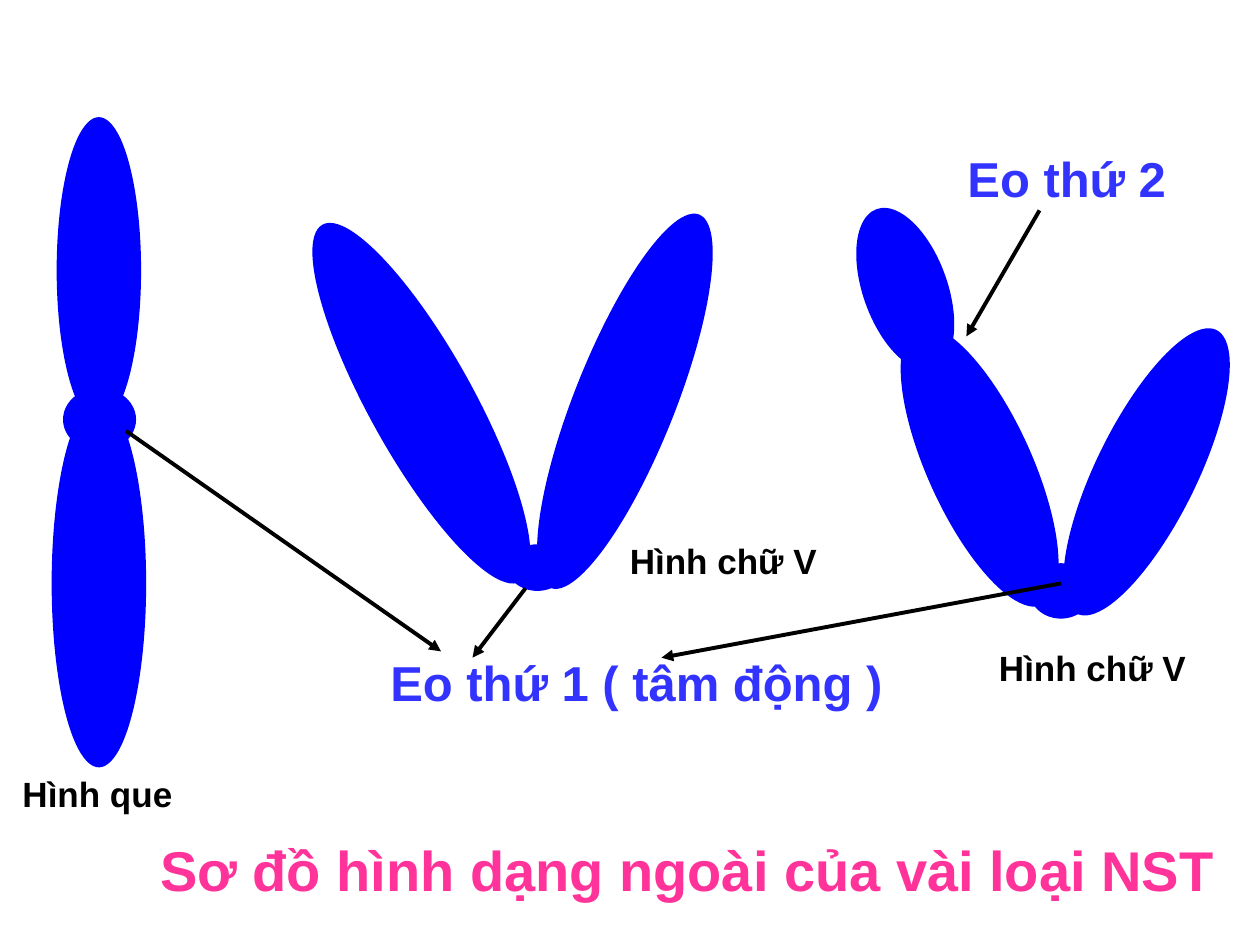
from lxml import etree
from pptx import Presentation
from pptx.dml.color import RGBColor
from pptx.enum.shapes import MSO_CONNECTOR, MSO_SHAPE
from pptx.enum.text import MSO_ANCHOR, MSO_AUTO_SIZE, PP_ALIGN
from pptx.oxml.ns import qn
from pptx.util import Inches, Pt

CHROMOSOME_BLUE = RGBColor(0x00, 0x00, 0xFF)
CONSTRICTION_BLUE = RGBColor(0x33, 0x33, 0xFF)
TITLE_PINK = RGBColor(0xFF, 0x33, 0x99)
BLACK = RGBColor(0x00, 0x00, 0x00)


def write(frame, text, size, color, wrap=True):
    frame.text = text
    frame.word_wrap = wrap
    frame.auto_size = MSO_AUTO_SIZE.NONE
    frame.vertical_anchor = MSO_ANCHOR.TOP
    paragraph = frame.paragraphs[0]
    paragraph.alignment = PP_ALIGN.LEFT
    font = paragraph.font
    font.name, font.size, font.bold = "Arial", Pt(size), True
    font.color.rgb = color


def add_label(slide, box, text, size=20, color=BLACK, wrap=False):
    label = slide.shapes.add_textbox(*map(Inches, box))
    write(label.text_frame, text, size, color, wrap)


def add_arrow(slide, start, end):
    arrow = slide.shapes.add_connector(
        MSO_CONNECTOR.STRAIGHT, *map(Inches, (*start, *end)))
    arrow.line.color.rgb = BLACK
    arrow.line.width = Pt(2.25)
    etree.SubElement(arrow.line._get_or_add_ln(), qn("a:tailEnd"), type="triangle")
    etree.SubElement(arrow._element.spPr, qn("a:effectLst"))


def add_chromosome(slide, left, top, parts, label, label_box):
    """Draw ellipses (x, y, width, height, rotation) and a caption from the corner."""
    for x, y, width, height, rotation in parts:
        part = slide.shapes.add_shape(
            MSO_SHAPE.OVAL, *map(Inches, (left + x, top + y, width, height)))
        part.rotation = rotation
        part.shadow.inherit = False
        part.fill.solid()
        part.fill.fore_color.rgb = CHROMOSOME_BLUE
        part.line.fill.background()
    x, y, width, height = label_box
    add_label(slide, (left + x, top + y, width, height), label)


def add_rod(slide, left, top):
    parts = [
        (0.04, 0, 0.67, 2.43, 0),        # upper arm
        (0.09, 2.15, 0.58, 0.5, 0),      # centromere
        (0, 2.24, 0.75, 2.92, 0),        # lower arm
    ]
    add_chromosome(slide, left, top, parts, "Hình que", (-0.33, 5.15, 1.39, 0.43))


def add_v_shape(slide, left, top):
    parts = [
        (0, 0, 0.83, 3.24, 331),         # left arm
        (1.63, 0.01, 0.8, 3.19, 21.7),   # right arm
        (1.1, 2.74, 0.47, 0.37, 0),      # centromere
    ]
    add_chromosome(slide, left, top, parts, "Hình chữ V", (1.97, 2.65, 1.68, 0.43))


def add_v_shape_with_satellite(slide, left, top):
    parts = [
        (0, 0, 0.67, 1.35, 340.3),       # satellite
        (0.51, 0.87, 0.83, 2.42, 335.6), # left arm
        (1.85, 0.87, 0.8, 2.51, 26.2),   # right arm
        (1.32, 2.85, 0.5, 0.44, 0),      # centromere
    ]
    add_chromosome(slide, left, top, parts, "Hình chữ V", (0.98, 3.46, 1.68, 0.43))


def add_constriction(slide, box, text, arrows):
    add_label(slide, box, text, 28, CONSTRICTION_BLUE, wrap=True)
    for start, end in arrows:
        add_arrow(slide, start, end)


def add_title(slide, left, top, width, height):
    title = slide.shapes.title
    title.left, title.top, title.width, title.height = map(
        Inches, (left, top, width, height))
    write(title.text_frame, "Sơ đồ hình dạng ngoài của vài loại NST", 32, TITLE_PINK)


def main():
    prs = Presentation()
    prs.slide_width, prs.slide_height = Inches(10), Inches(7.5)
    slide = prs.slides.add_slide(prs.slide_layouts[5])

    add_title(slide, 1.17, 6.58, 8.83, 0.63)
    add_rod(slide, 0.41, 0.93)
    add_v_shape(slide, 2.93, 1.58)
    add_v_shape_with_satellite(slide, 6.85, 1.62)

    # Primary constriction, pointed to from each centromere
    add_constriction(slide, (3, 5.13, 4.92, 0.57), "Eo thứ 1 ( tâm động )", [
        ((1, 3.42), (3.5, 5.17)),
        ((4.17, 4.67), (3.75, 5.22)),
        ((8.42, 4.63), (5.25, 5.22)),
    ])
    # Secondary constriction
    add_constriction(slide, (7.58, 1.13, 2.25, 0.57), "Eo thứ 2", [
        ((8.25, 1.67), (7.67, 2.67)),
    ])
    prs.save("out.pptx")


if __name__ == "__main__":
    main()
